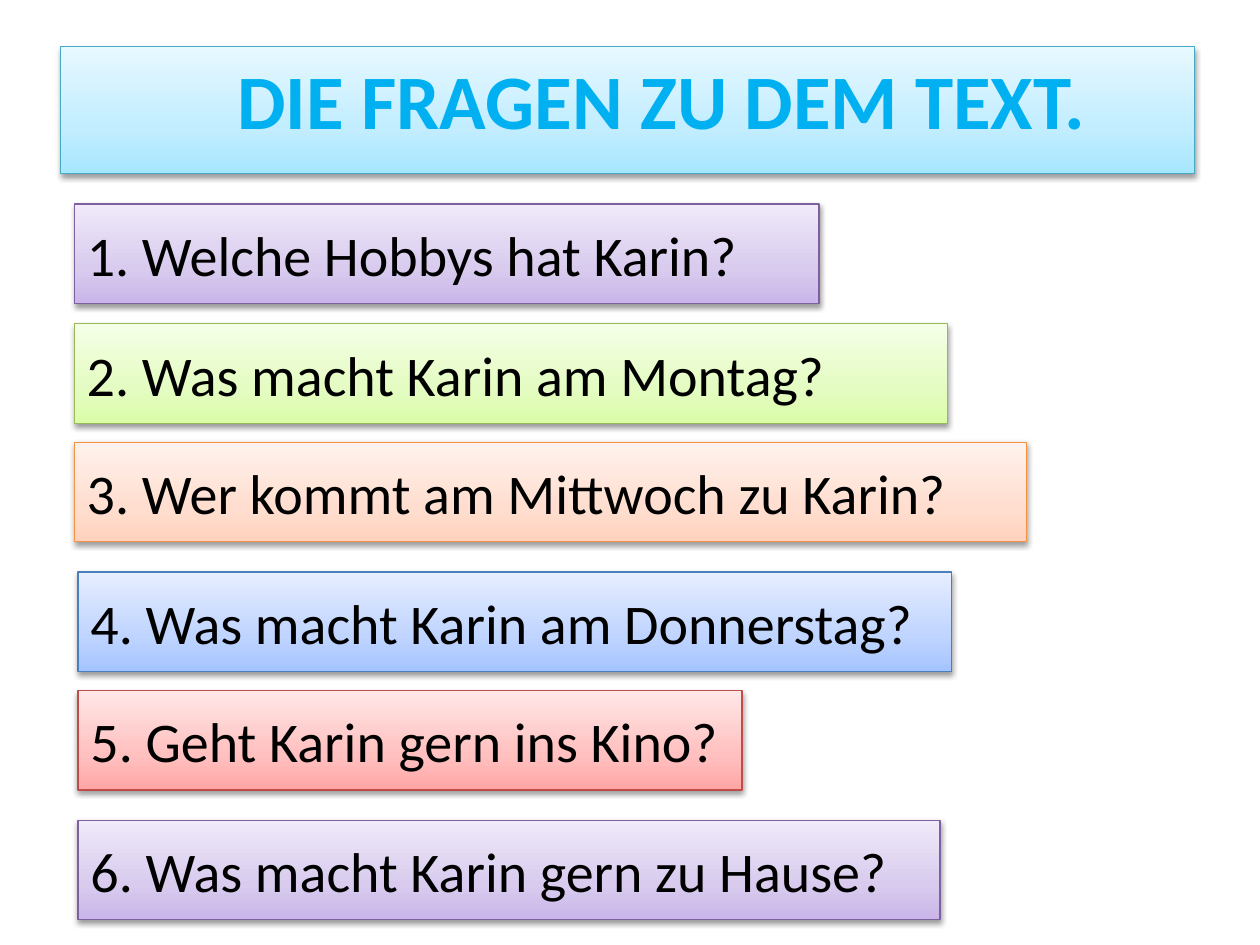
from pptx import Presentation
from pptx.dml.color import RGBColor
from pptx.enum.shapes import MSO_SHAPE
from pptx.enum.text import MSO_ANCHOR, MSO_AUTO_SIZE, PP_ALIGN
from pptx.oxml import parse_xml
from pptx.oxml.ns import nsdecls, qn
from pptx.util import Inches, Pt

COLORS = {"heading": "00B0F0", "question": "000000", "shadow": "000000"}
PALETTES = {
    "aqua": {"stops": ("A7E6FF", "C1EDFF", "E7F8FF"), "line": "46AAC5"},
    "purple": {"stops": ("C9B5E8", "D8CBEE", "F0EAF9"), "line": "7D60A0"},
    "green": {"stops": ("DAFDA7", "E4FCC2", "F5FFE7"), "line": "98B955"},
    "orange": {"stops": ("FFD2BD", "FFDED0", "FFF2ED"), "line": "F69240"},
    "blue": {"stops": ("A4C4FF", "BFD4FF", "E6EEFF"), "line": "4B7EBC"},
    "red": {"stops": ("FFA6A5", "FFC0BF", "FFE7E7"), "line": "BF4C48"},
}
STOP_POSITIONS = (0, 35000, 100000)
QUESTION_HEIGHT = 0.79
QUESTIONS = [
    ("1. Welche Hobbys hat Karin?", "purple", 0.59, 1.62, 5.91),
    ("2. Was macht Karin am Montag?", "green", 0.59, 2.57, 6.93),
    ("3. Wer kommt am Mittwoch zu Karin?", "orange", 0.59, 3.51, 7.56),
    ("4. Was macht Karin am Donnerstag?", "blue", 0.62, 4.54, 6.93),
    ("5. Geht Karin gern ins Kino?", "red", 0.62, 5.48, 5.27),
    ("6. Was macht Karin gern zu Hause?", "purple", 0.62, 6.51, 6.84),
]


def style_panel(panel, palette_name):
    palette = PALETTES[palette_name]
    panel.line.color.rgb = RGBColor.from_string(palette["line"])
    panel.line.width = Pt(0.75)
    panel.shadow.inherit = False
    properties = panel._element.spPr
    stops = "".join(
        f'<a:gs pos="{position}"><a:srgbClr val="{color}"/></a:gs>'
        for position, color in zip(STOP_POSITIONS, palette["stops"])
    )
    properties.find(qn("a:ln")).addprevious(parse_xml(
        f'<a:gradFill {nsdecls("a")} rotWithShape="1"><a:gsLst>{stops}</a:gsLst>'
        '<a:lin ang="16200000" scaled="0"/></a:gradFill>'
    ))
    properties.find(qn("a:effectLst")).append(parse_xml(
        f'<a:outerShdw {nsdecls("a")} blurRad="40000" dist="20000" dir="5400000" '
        f'rotWithShape="0"><a:srgbClr val="{COLORS["shadow"]}">'
        '<a:alpha val="38000"/></a:srgbClr></a:outerShdw>'
    ))


def write_text(panel, text, size, color, alignment, anchor, bold=False):
    frame = panel.text_frame
    frame.text = text
    frame.word_wrap = True
    frame.auto_size = MSO_AUTO_SIZE.NONE
    frame.vertical_anchor = anchor
    paragraph = frame.paragraphs[0]
    paragraph.alignment = alignment
    paragraph.font.name = "Calibri"
    paragraph.font.size = Pt(size)
    paragraph.font.bold = bold
    paragraph.font.color.rgb = RGBColor.from_string(COLORS[color])


def format_heading(slide):
    heading = slide.shapes.title
    heading.left, heading.top = Inches(0.48), Inches(0.37)
    heading.width, heading.height = Inches(9), Inches(1.01)
    style_panel(heading, "aqua")
    write_text(heading, "DIE FRAGEN ZU DEM TEXT.", 44, "heading",
               PP_ALIGN.CENTER, MSO_ANCHOR.TOP, bold=True)
    heading.text_frame.margin_left = Inches(0.65)


def add_question(slide, text, palette_name, left, top, width):
    question = slide.shapes.add_shape(
        MSO_SHAPE.RECTANGLE, Inches(left), Inches(top),
        Inches(width), Inches(QUESTION_HEIGHT),
    )
    style_panel(question, palette_name)
    write_text(question, text, 32, "question", PP_ALIGN.LEFT, MSO_ANCHOR.MIDDLE)


def main():
    presentation = Presentation()
    presentation.slide_width = Inches(10)
    presentation.slide_height = Inches(7.5)
    slide = presentation.slides.add_slide(presentation.slide_layouts[5])
    format_heading(slide)
    for question in QUESTIONS:
        add_question(slide, *question)
    presentation.save("out.pptx")


if __name__ == "__main__":
    main()
